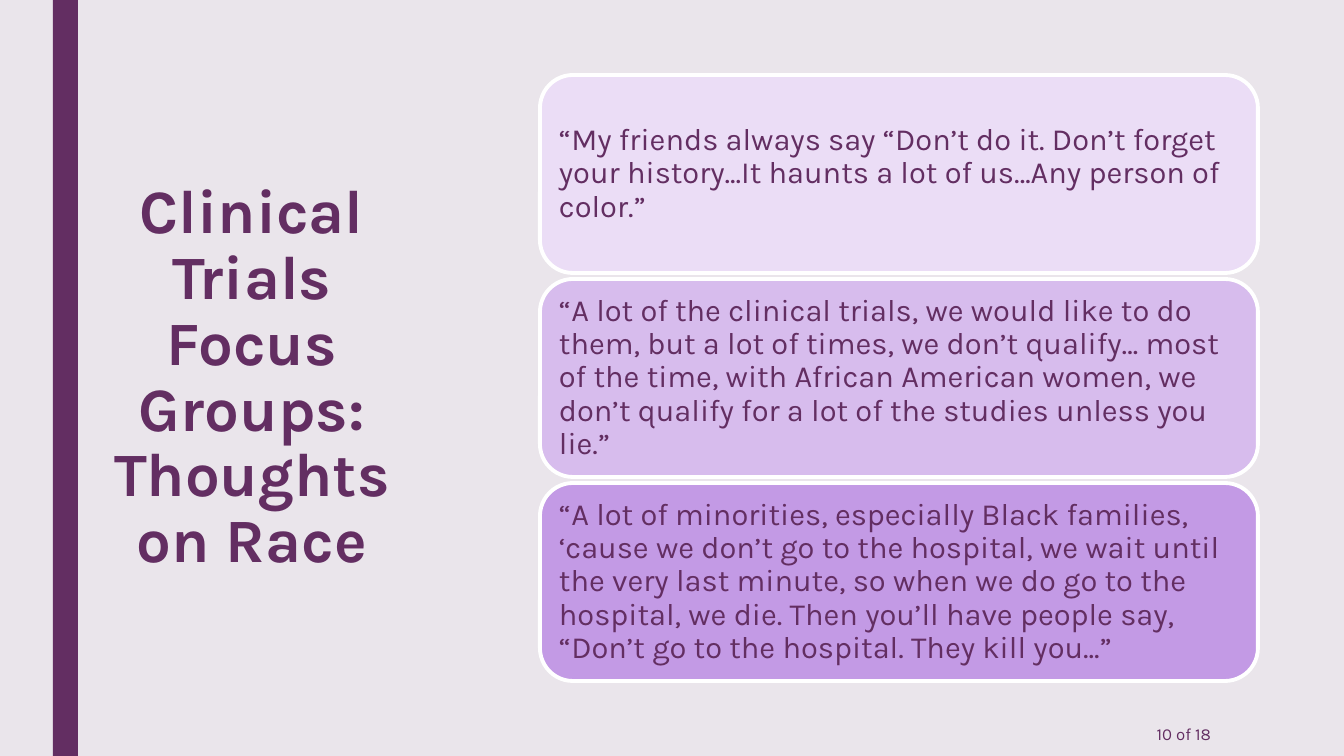
from pptx import Presentation
from pptx import util as u
from pptx.dml.color import RGBColor
from pptx.enum import shapes, text

PX = 914400 / 100.8
COLORS = {
    "background": "EAE5EB",
    "plum": "632E62",
    "border": "FFFFFF",
    "pale": "EBDDF6",
    "lilac": "D7BCED",
    "violet": "C39AE5",
}
QUOTES = [
    ("pale", "“My friends always say “Don’t do it. Don’t forget your history...It haunts "
             "a lot of us…Any person of color.”"),
    ("lilac", "“A lot of the clinical trials, we would like to do them, but a lot of times, "
              "we don’t qualify… most of the time, with African American women, we don’t "
              "qualify for a lot of the studies unless you lie.”"),
    ("violet", "“A lot of minorities, especially Black families, ‘cause we don’t go to the "
               "hospital, we wait until the very last minute, so when we do go to the hospital, "
               "we die. Then you’ll have people say, “Don’t go to the hospital. They kill you...”"),
]
CARD_TOP, CARD_HEIGHT, CARD_PITCH = 75, 198, 204


def px(value):
    return u.Emu(round(value * PX))


def color(name):
    return RGBColor.from_string(COLORS[name])


def apply(target, values):
    for name, value in values.items():
        setattr(target, name, value)


def add_panel(slide, kind, box, fill, border=None):
    panel = slide.shapes.add_shape(kind, *map(px, box))
    panel.shadow.inherit = False
    panel.fill.solid()
    panel.fill.fore_color.rgb = color(fill)
    if border:
        panel.line.color.rgb = color(border)
        panel.line.width = u.Pt(2.75)
    else:
        panel.line.fill.background()


def add_words(slide, box, words, size, align, spacing=1.0, bold=False, side=9):
    frame = slide.shapes.add_textbox(*map(px, box)).text_frame
    apply(frame, {
        "word_wrap": True,
        "vertical_anchor": text.MSO_ANCHOR.MIDDLE,
        "margin_left": px(side),
        "margin_right": px(side),
        "margin_top": px(9),
        "margin_bottom": px(9),
    })
    paragraph = frame.paragraphs[0]
    apply(paragraph, {"alignment": align, "line_spacing": spacing})
    run = paragraph.add_run()
    run.text = words
    apply(run.font, {"name": "Karla", "size": u.Pt(size), "bold": bold})
    run.font.color.rgb = color("plum")


def add_quote(slide, top, fill, quote):
    add_panel(slide, shapes.MSO_SHAPE.ROUNDED_RECTANGLE,
              (540, top, 718, CARD_HEIGHT), fill, "border")
    add_words(slide, (550, top + 10, 698, CARD_HEIGHT - 20), quote, 22,
              text.PP_ALIGN.LEFT, 0.9)


def main():
    deck = Presentation()
    apply(deck, {"slide_width": px(1344), "slide_height": px(756)})
    slide = deck.slides.add_slide(deck.slide_layouts[6])
    slide.background.fill.solid()
    slide.background.fill.fore_color.rgb = color("background")

    add_panel(slide, shapes.MSO_SHAPE.RECTANGLE, (53, 0, 25, 756), "plum")
    add_words(slide, (70, 71, 364, 615), "Clinical Trials Focus Groups: Thoughts on Race",
              44, text.PP_ALIGN.CENTER, 0.89, bold=True, side=25)
    for row, (fill, quote) in enumerate(QUOTES):
        add_quote(slide, CARD_TOP + row * CARD_PITCH, fill, quote)
    add_words(slide, (1044, 712, 176, 44), "10 of 18", 12, text.PP_ALIGN.RIGHT)

    deck.save("out.pptx")


if __name__ == "__main__":
    main()
